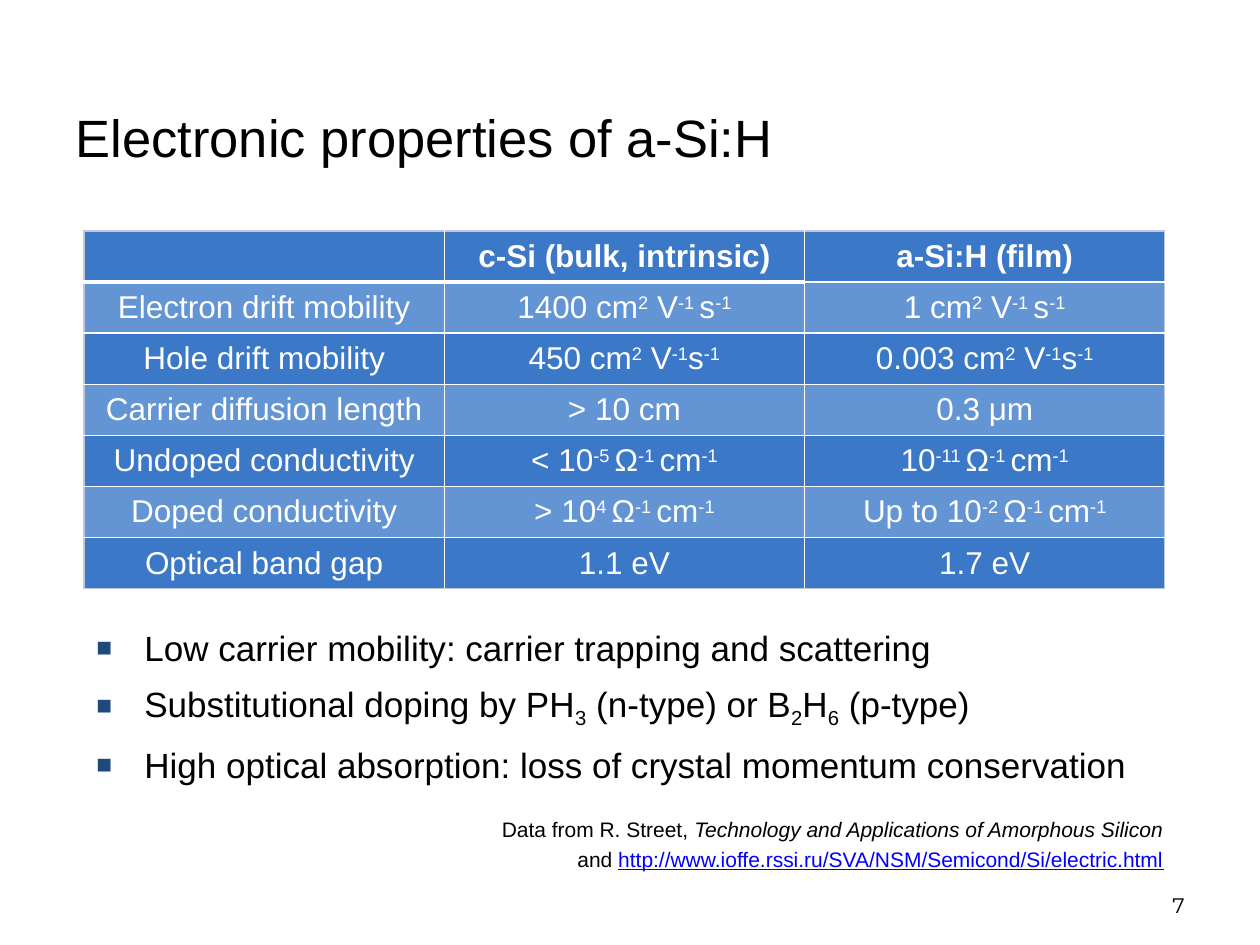
"""Build the slide on the electronic properties of a-Si:H."""
from lxml.etree import SubElement as Sub
from pptx import Presentation
from pptx.dml.color import RGBColor as Rgb
from pptx.enum.text import MSO_ANCHOR as Anchor, PP_ALIGN as Align
from pptx.oxml.ns import qn
from pptx.util import Emu, Pt

HUES = {"ink": "000000", "white": "FFFFFF", "row": "3C78C8", "band": "6394D3",
        "edge": "BDC8DD", "mark": "1F497D", "link": "0000FF"}
SHIFT = {"^": "30000", "_": "-25000"}
ROWS = [
    ["", "c-Si (bulk, intrinsic)", "a-Si:H (film)"],
    ["Electron drift mobility", "1400 cm|^2| V|^-1 |s|^-1", "1 cm|^2| V|^-1 |s|^-1"],
    ["Hole drift mobility", "450 cm|^2| V|^-1|s|^-1", "0.003 cm|^2| V|^-1|s|^-1"],
    ["Carrier diffusion length", "> 10 cm", "0.3 μm"],
    ["Undoped conductivity", "< 10|^-5 |Ω|^-1 |cm|^-1", "10|^-11 |Ω|^-1 |cm|^-1"],
    ["Doped conductivity", "> 10|^4 |Ω|^-1 |cm|^-1", "Up to 10|^-2 |Ω|^-1 |cm|^-1"],
    ["Optical band gap", "1.1 eV", "1.7 eV"],
]
POINTS = [
    "Low carrier mobility: carrier trapping and scattering",
    "Substitutional doping by PH|_3| (n-type) or B|_2|H|_6| (p-type)",
    "High optical absorption: loss of crystal momentum conservation",
]
SOURCE = [
    "Data from R. Street, |*Technology and Applications of Amorphous Silicon",
    "and |~http://www.ioffe.rssi.ru/SVA/NSM/Semicond/Si/electric.html",
]


def px(num):
    """Turn pixels into EMU."""
    return Emu(round(num * 914400 / 126))


def hue(name):
    """Look up a colour by name."""
    return Rgb.from_string(HUES[name])


class Deck:
    """Hold the style and the current slide."""

    def __init__(self, face="Arial"):
        """Start a deck with one title-only slide."""
        self.face = face
        self.file = Presentation()
        self.file.slide_width, self.file.slide_height = px(1260), px(945)
        self.slide = self.file.slides.add_slide(self.file.slide_layouts[5])

    def words(self, para, text, size, tint="ink", align=Align.LEFT, bold=False, face=None):
        """Fill a paragraph, reading a leading mark on each piece."""
        para.alignment = align
        font = para.font
        font.name, font.size, font.bold = face or self.face, Pt(size), bold
        font.color.rgb = hue(tint)
        for part in filter(None, text.split("|")):
            mark = part[0] if part[0] in "^_*~" else ""
            run = para.add_run()
            run.text = part[len(mark):]
            if mark in SHIFT:
                run._r.get_or_add_rPr().set("baseline", SHIFT[mark])
            elif mark == "*":
                run.font.italic = True
            elif mark == "~":
                run.font.underline = True
                run.font.color.rgb = hue("link")

    def title(self, box, text):
        """Place and fill the title."""
        shape = self.slide.shapes.title
        shape.left, shape.top, shape.width, shape.height = map(px, box)
        shape.text_frame.vertical_anchor = Anchor.MIDDLE
        self.words(shape.text_frame.paragraphs[0], text, 30)

    def text(self, box, lines, size, before=0, after=0, bullet=False,
             anchor=Anchor.TOP, **style):
        """Add a text box with one paragraph a line."""
        frame = self.slide.shapes.add_textbox(*map(px, box)).text_frame
        frame.word_wrap, frame.vertical_anchor = True, anchor
        for num, line in enumerate(lines):
            para = frame.add_paragraph() if num else frame.paragraphs[0]
            para.space_before = Pt(before if num else 0)
            para.space_after = Pt(after)
            if bullet:
                self.bullet(para)
            self.words(para, line, size, **style)

    def bullet(self, para):
        """Give a paragraph a square bullet and a hanging indent."""
        props = para._p.get_or_add_pPr()
        props.set("marL", str(px(48)))
        props.set("indent", str(px(-48)))
        Sub(Sub(props, qn("a:buClr")), qn("a:srgbClr"), val=HUES["mark"])
        Sub(props, qn("a:buSzPct"), val="75000")
        Sub(props, qn("a:buFont"), typeface=self.face)
        Sub(props, qn("a:buChar"), char="■")

    def edge(self, cell, side, tint, width):
        """Draw one border of a cell."""
        line = Sub(cell._tc.get_or_add_tcPr(), qn(f"a:ln{side}"), w=str(Pt(width)))
        Sub(Sub(line, qn("a:solidFill")), qn("a:srgbClr"), val=HUES[tint])

    def table(self, box, rows):
        """Add a table with banded rows and a thin frame."""
        high, wide = len(rows), len(rows[0])
        grid = self.slide.shapes.add_table(high, wide, *map(px, box)).table
        grid.first_row = grid.horz_banding = False
        for r, row in enumerate(rows):
            for c, text in enumerate(row):
                cell = grid.cell(r, c)
                cell.vertical_anchor = Anchor.MIDDLE
                sides = {"L": c == 0, "R": c == wide - 1, "T": r == 0, "B": r == high - 1}
                for side, outer in sides.items():
                    if outer:
                        self.edge(cell, side, "edge", 0.75)
                    elif side == "B" and r == 0 and c < wide - 1:
                        self.edge(cell, side, "white", 3)
                cell.fill.solid()
                cell.fill.fore_color.rgb = hue("band" if r % 2 else "row")
                self.words(cell.text_frame.paragraphs[0], text, 18, "white",
                           Align.CENTER, bold=r == 0)


def main():
    """Build and save the slide."""
    deck = Deck()
    deck.title((63, 63, 1113, 147), "Electronic properties of a-Si:H")
    deck.table((84, 231, 1081, 358), ROWS)
    deck.text((84, 620, 1081, 199), POINTS, 20, before=8, bullet=True)
    deck.text((357, 810, 819, 69), SOURCE, 12, after=3, align=Align.RIGHT)
    deck.text((903, 861, 294, 63), ["7"], 12, anchor=Anchor.BOTTOM,
              align=Align.RIGHT, face="Montserrat")
    deck.file.save("out.pptx")


if __name__ == "__main__":
    main()
